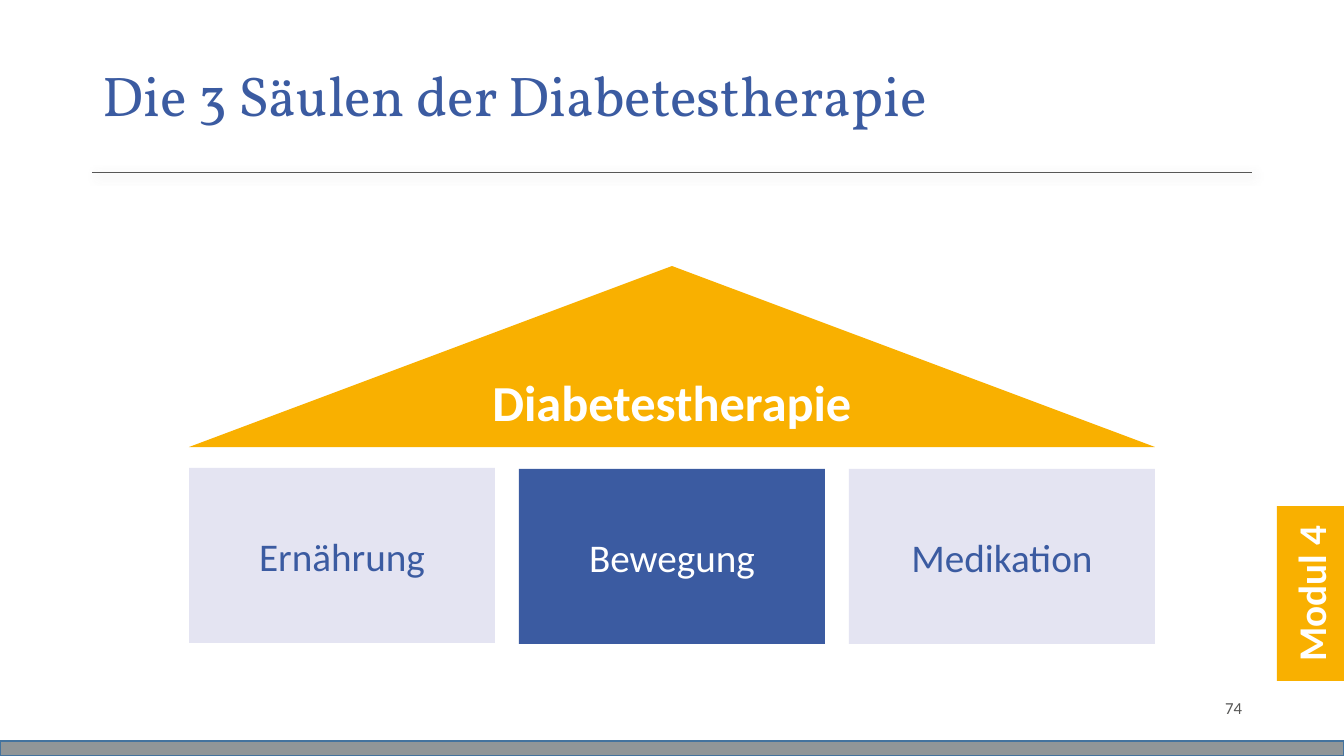
import lxml.etree
import pptx
import pptx.dml.color
import pptx.enum.shapes
import pptx.enum.text
import pptx.oxml.ns
import pptx.util

RGB = pptx.dml.color.RGBColor
SHAPE = pptx.enum.shapes.MSO_SHAPE
ALIGN = pptx.enum.text.PP_ALIGN
MIDDLE = pptx.enum.text.MSO_ANCHOR.MIDDLE

BLUE = RGB(0x3B, 0x5B, 0xA1)
GOLD = RGB(0xF9, 0xB0, 0x00)
PALE = RGB(0xE4, 0xE4, 0xF2)
WHITE = RGB(0xFF, 0xFF, 0xFF)
GREY = RGB(0x57, 0x57, 0x56)
BAR = RGB(0x90, 0x96, 0x98)
EDGE = RGB(0x43, 0x73, 0x9E)


def px(*vals):
    """Turn pixels (100.8 to the inch) into EMU."""
    return [pptx.util.Emu(round(val * 914400 / 100.8)) for val in vals]


def write(shape, text, size, color, align=ALIGN.CENTER, name="Calibri",
          bold=False, space=1.0):
    frame = shape.text_frame
    para = frame.paragraphs[0]
    run = para.add_run()
    run.text = text
    run.font.color.rgb = color
    formats = {
        frame: {"word_wrap": True, "vertical_anchor": MIDDLE},
        para: {"alignment": align, "line_spacing": space},
        run.font: {"name": name, "size": pptx.util.Pt(size), "bold": bold},
    }
    for item, values in formats.items():
        for key, value in values.items():
            setattr(item, key, value)


def add_block(slide, kind, box, fill, edge=None):
    shape = slide.shapes.add_shape(kind, *px(*box))
    shape.shadow.inherit = False
    shape.fill.solid()
    shape.fill.fore_color.rgb = fill
    if edge is None:
        shape.line.fill.background()
    else:
        shape.line.color.rgb = edge
        shape.line.width = pptx.util.Pt(1)
    return shape


def add_label(slide, box, text, size, color, **style):
    write(slide.shapes.add_textbox(*px(*box)), text, size, color, **style)


def add_rule(slide, left, right, top):
    rule = slide.shapes.add_connector(
        pptx.enum.shapes.MSO_CONNECTOR.STRAIGHT, *px(left, top, right, top))
    rule.line.color.rgb = GREY
    rule.line.width = pptx.util.Pt(0.5)
    # Soft shadow below the rule
    node = rule._element.spPr
    pt = pptx.util.Pt
    for tag, values in (
        ("a:effectLst", {}),
        ("a:outerShdw", {"blurRad": pt(7), "dist": pt(3), "dir": 45 * 60000}),
        ("a:srgbClr", {"val": GREY}),
        ("a:alpha", {"val": 50000}),
    ):
        node = lxml.etree.SubElement(node, pptx.oxml.ns.qn(tag))
        for key, value in values.items():
            node.set(key, str(value))


def add_house(slide):
    # Three pillars, the first one a pixel higher
    left, width, step = 189, 306, 330
    pillars = (("Ernährung", 468, PALE, BLUE),
               ("Bewegung", 469, BLUE, WHITE),
               ("Medikation", 469, PALE, BLUE))
    for col, (text, top, fill, color) in enumerate(pillars):
        box = (left + col * step, top, width, 175)
        write(add_block(slide, SHAPE.RECTANGLE, box, fill), text, 28, color)
    # Roof
    box = (left, 266, 2 * step + width, 181)
    roof = add_block(slide, SHAPE.ISOSCELES_TRIANGLE, box, GOLD)
    write(roof, "Diabetestherapie", 36, WHITE, bold=True)


def main():
    deck = pptx.Presentation()
    deck.slide_width, deck.slide_height = px(1344, 756)
    slide = deck.slides.add_slide(deck.slide_layouts[6])

    # Footer and page number
    add_block(slide, SHAPE.RECTANGLE, (0, 741, 1344, 15), BAR, EDGE)
    add_label(slide, (950, 688, 302, 40), "74", 12, GREY, align=ALIGN.RIGHT)

    # Title
    add_rule(slide, 92, 1252, 172)
    add_label(slide, (93, 39, 873, 119), "Die 3 Säulen der Diabetestherapie",
              40, BLUE, align=ALIGN.LEFT, name="Vollkorn", space=0.9)

    add_house(slide)

    # Module tab at the right edge
    tab = add_block(slide, SHAPE.RECTANGLE, (1223, 560, 175, 67), GOLD)
    tab.rotation = 270
    write(tab, "Modul 4", 28, WHITE, bold=True)

    deck.save("out.pptx")


if __name__ == "__main__":
    main()
